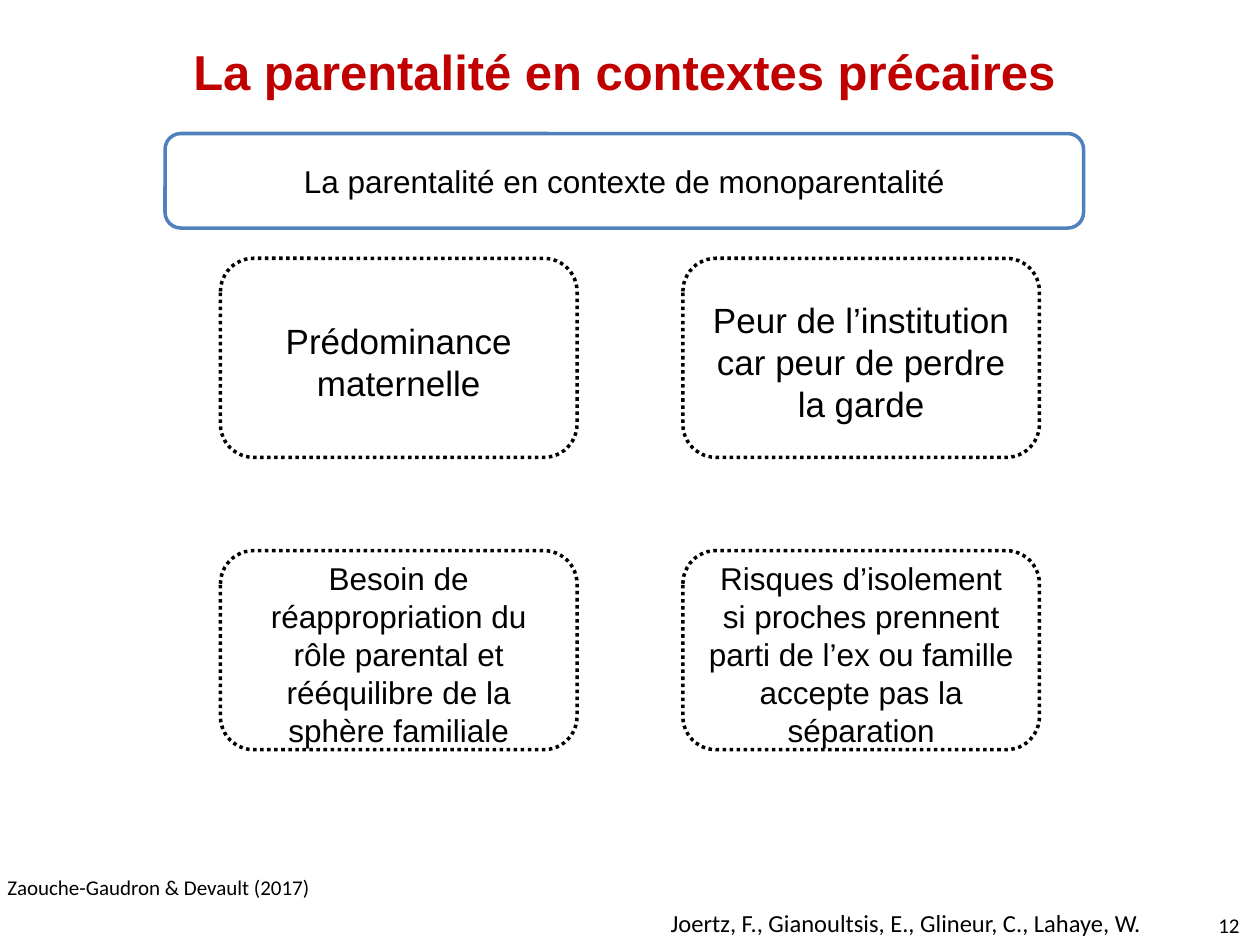
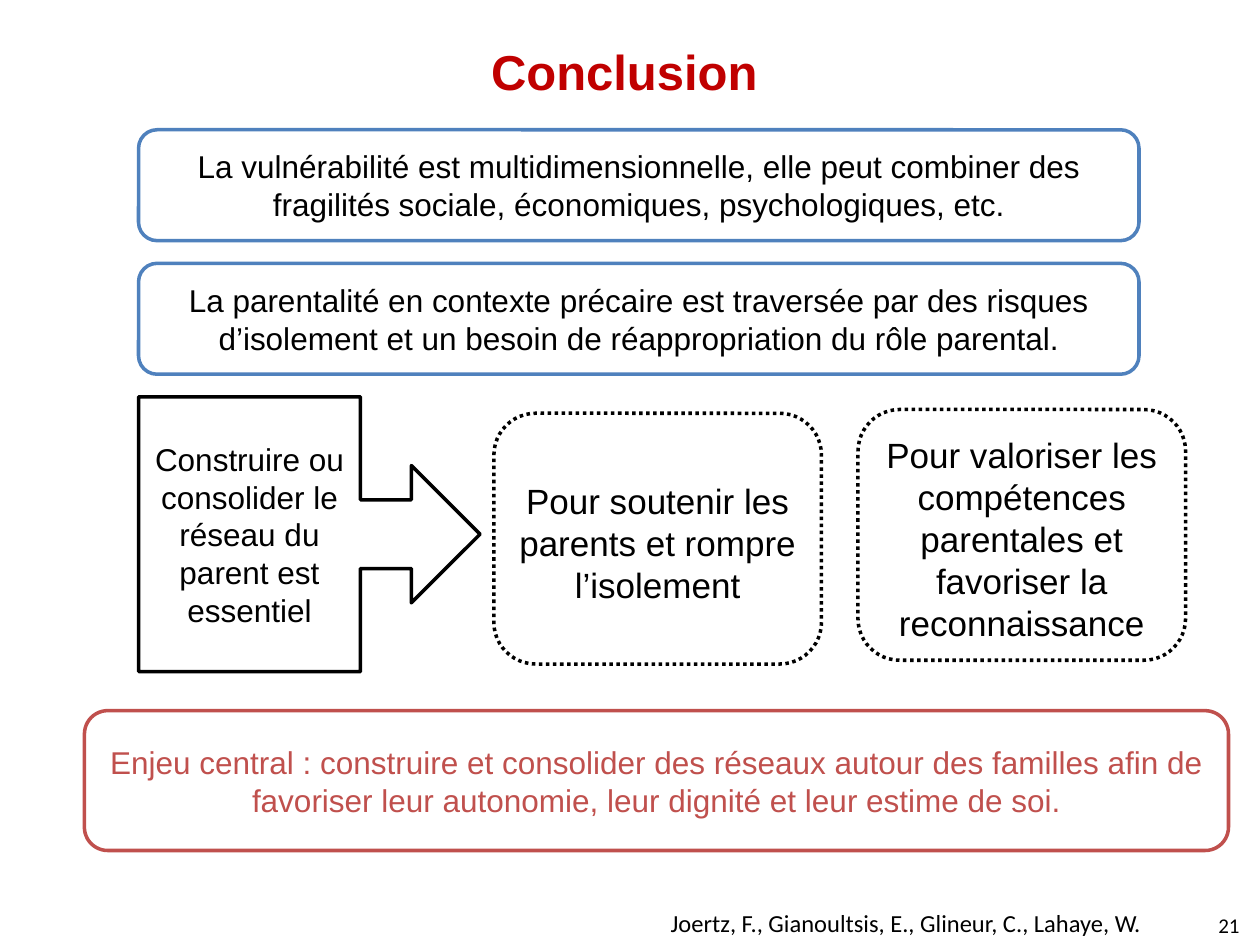
from collections import namedtuple

from pptx import Presentation
from pptx.dml.color import RGBColor
from pptx.enum.dml import MSO_LINE
from pptx.enum.shapes import MSO_SHAPE
from pptx.enum.text import MSO_ANCHOR, PP_ALIGN
from pptx.util import Inches, Pt

ROUNDED, CALLOUT = MSO_SHAPE.ROUNDED_RECTANGLE, MSO_SHAPE.RIGHT_ARROW_CALLOUT
MIDDLE, TOP = MSO_ANCHOR.MIDDLE, MSO_ANCHOR.TOP
CENTER, LEFT = PP_ALIGN.CENTER, PP_ALIGN.LEFT
DOTTED = MSO_LINE.ROUND_DOT

COLS, ROWS = 100, 75
UNIT = Inches(0.1)
BLACK, WHITE, BLUE, RED, TITLE_RED = "000000", "FFFFFF", "4F81BD", "C0504D", "C00000"
HEAD_FONT, FOOT_FONT = "Arial", "Calibri"
AUTHORS = "Joertz, F., Gianoultsis, E., Glineur, C., Lahaye, W."

Box = namedtuple("Box", "col row cols rows")


def rgb(color):
    """Turn a hex string into a colour."""
    return RGBColor.from_string(color)


def place(box):
    """Turn a box in grid units into slide lengths."""
    return [round(n * UNIT) for n in box]


def write(sp, text, size, font=HEAD_FONT, color=BLACK, align=CENTER, anchor=MIDDLE, bold=False):
    """Fill a shape with one paragraph of text."""
    tf = sp.text_frame
    tf.word_wrap = True
    tf.vertical_anchor = anchor
    p = tf.paragraphs[0]
    p.alignment = align
    p.add_run().text = text
    p.font.name, p.font.size, p.font.bold = font, Pt(size), bold
    p.font.color.rgb = rgb(color)
    return tf


def label(s, box, text, size, **style):
    """Add a text box."""
    return write(s.shapes.add_textbox(*place(box)), text, size, **style)


def panel(s, box, text, line=BLACK, kind=ROUNDED, size=18, color=BLACK, dash=None):
    """Add a white outlined shape with centred text."""
    sp = s.shapes.add_shape(kind, *place(box))
    sp.shadow.inherit = False
    sp.fill.solid()
    sp.fill.fore_color.rgb = rgb(WHITE)
    sp.line.color.rgb = rgb(line)
    sp.line.width = Pt(2)
    if dash:
        sp.line.dash_style = dash
    return write(sp, text, size, color=color)


def bands(s, box, texts, gap=0):
    """Stack blue bands of equal height down a box."""
    height = (box.rows - gap * (len(texts) - 1)) / len(texts)
    for i, text in enumerate(texts):
        panel(s, Box(box.col, box.row + i * (height + gap), box.cols, height), text, BLUE)


def cards(s, box, rows, gap_cols, gap_rows=0, rise=0):
    """Lay dotted cards out in a box, each column lifted by the rise."""
    width = (box.cols - gap_cols * (len(rows[0]) - 1)) / len(rows[0])
    height = (box.rows - gap_rows * (len(rows) - 1)) / len(rows)
    for j, row in enumerate(rows):
        for i, (text, size) in enumerate(row):
            card = Box(box.col + i * (width + gap_cols),
                       box.row + j * (height + gap_rows) - i * rise, width, height)
            tf = panel(s, card, text, size=size, dash=DOTTED)
            tf.margin_top = Inches(0.11)


def base_slide(prs, title, number):
    """Add a blank slide with its title, authors and page number."""
    s = prs.slides.add_slide(prs.slide_layouts[6])
    label(s, Box(1.7, 2.7, 95.7, 5.8), title, 28, color=TITLE_RED, bold=True)
    tf = label(s, Box(95.9, 72.7, 3.7, 1.9), number, 12, font=FOOT_FONT, align=LEFT, anchor=TOP)
    tf.margin_left = Inches(0.08)
    tf.margin_right = tf.margin_top = tf.margin_bottom = 0
    tf.paragraphs[0].line_spacing = Pt(12.4)
    label(s, Box(45.2, 71.6, 53.4, 3.4), AUTHORS, 14, font=FOOT_FONT, anchor=TOP)
    return s


def single_parent_slide(prs):
    """Build the slide on single parenthood."""
    s = base_slide(prs, "La parentalité en contextes précaires", "12")
    bands(s, Box(13.1, 10.6, 72.9, 7.5), ["La parentalité en contexte de monoparentalité"])
    cards(s, Box(17.5, 20.5, 65, 39), [
        [("Prédominance maternelle", 20),
         ("Peur de l’institution car peur de perdre la garde", 20)],
        [("Besoin de réappropriation du rôle parental et rééquilibre de la sphère familiale", 18),
         ("Risques d’isolement si proches prennent parti de l’ex ou famille "
          "accepte pas la séparation", 18)],
    ], gap_cols=8.4, gap_rows=7.4)
    label(s, Box(-0.4, 68.9, 61.7, 3), "Zaouche-Gaudron & Devault (2017)", 12,
          font=FOOT_FONT, align=LEFT, anchor=TOP)


def conclusion_slide(prs):
    """Build the concluding slide."""
    s = base_slide(prs, "Conclusion", "21")
    bands(s, Box(11, 10.3, 79.4, 19.4), [
        "La vulnérabilité est multidimensionnelle, elle peut combiner des fragilités "
        "sociale, économiques, psychologiques, etc.",
        "La parentalité en contexte précaire est traversée par des risques d’isolement "
        "et un besoin de réappropriation du rôle parental.",
    ], gap=1.8)
    panel(s, Box(11, 31.5, 27.1, 21.8),
          "Construire ou consolider le réseau du parent est essentiel", kind=CALLOUT)
    cards(s, Box(39.2, 32.8, 54.9, 19.9), [
        [("Pour soutenir les parents et rompre l’isolement", 20),
         ("Pour valoriser les compétences parentales et favoriser la reconnaissance", 20)],
    ], gap_cols=2.9, rise=0.3)
    panel(s, Box(6.7, 56.4, 90.8, 11.1),
          "Enjeu central : construire et consolider des réseaux autour des familles afin de "
          "favoriser leur autonomie, leur dignité et leur estime de soi.", RED, color=RED)


def main():
    """Build and save the presentation."""
    prs = Presentation()
    prs.slide_width, prs.slide_height = COLS * UNIT, ROWS * UNIT
    single_parent_slide(prs)
    conclusion_slide(prs)
    prs.save("out.pptx")


if __name__ == "__main__":
    main()
